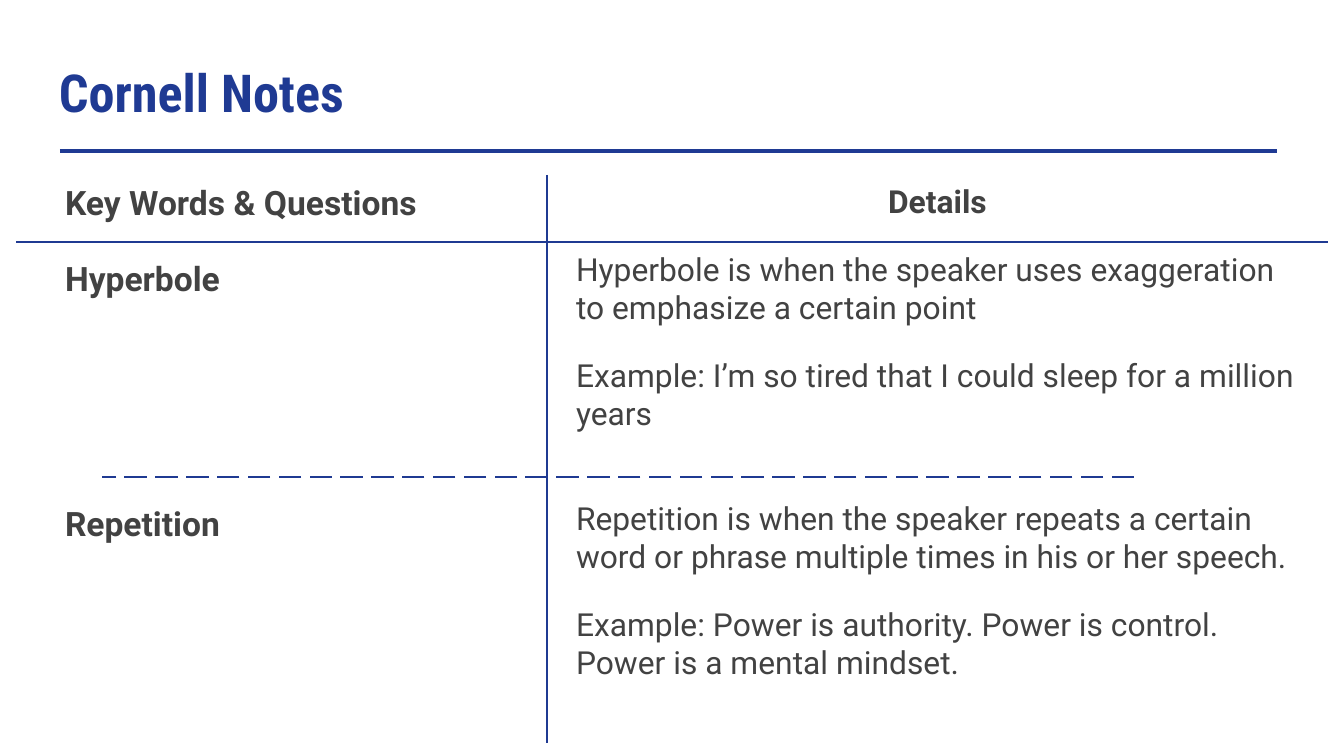
from lxml.etree import SubElement
from pptx import Presentation
from pptx.dml.color import RGBColor
from pptx.enum.dml import MSO_LINE_DASH_STYLE as Dash
from pptx.enum.shapes import MSO_CONNECTOR as Connector
from pptx.enum.text import PP_ALIGN as Align
from pptx.oxml.ns import qn
from pptx.util import Pt

EMU_PER_PX = 914400 / 134.4
INSET = 13
COLORS = {"title": "1F3A93", "divider": "1F3A92", "body": "424242"}


def px(length):
    """Turn a length in px into EMU."""
    return round(length * EMU_PER_PX)


def add_rule(slide, start, end, color="divider", weight=1.5, dash=None):
    """Draw a straight rule between two points."""
    rule = slide.shapes.add_connector(Connector.STRAIGHT, *map(px, start + end))
    rule.line.color.rgb = RGBColor.from_string(COLORS[color])
    rule.line.width = Pt(weight)
    if dash is not None:
        rule.line.dash_style = dash
    SubElement(rule._element.spPr, qn("a:effectLst"))


def add_text_frame(slide, left, top, width, height):
    """Add a wrapping text box with equal insets and return its frame."""
    frame = slide.shapes.add_textbox(*map(px, (left, top, width, height))).text_frame
    frame.word_wrap = True
    frame.margin_left = frame.margin_right = px(INSET)
    frame.margin_top = frame.margin_bottom = px(INSET)
    return frame


def format_paragraph(paragraph, size, bold, color="body", font="Roboto",
                     before=0, spacing=1.0, align=Align.LEFT):
    """Set the spacing, alignment and font of one paragraph."""
    paragraph.alignment = align
    paragraph.space_before = Pt(before)
    paragraph.line_spacing = spacing
    for run in paragraph.runs:
        run.font.name = font
        run.font.size = Pt(size)
        run.font.bold = bold
        run.font.color.rgb = RGBColor.from_string(COLORS[color])


def add_title(slide, title):
    """Add the slide title and the rule below it."""
    frame = add_text_frame(slide, 46, 47, 1253, 85)
    frame.text = title
    format_paragraph(frame.paragraphs[0], 28, True, "title", "Roboto Condensed")
    add_rule(slide, (60, 151), (1277, 151), "title", 2.25)


def add_key_words(slide, heading, entries):
    """Add the left column; each entry is a word and the space before it."""
    frame = add_text_frame(slide, 52, 163, 382, 535)
    frame.text = heading
    format_paragraph(frame.paragraphs[0], 18, True, spacing=1.15)
    for word, before in entries:
        paragraph = frame.add_paragraph()
        paragraph.text = word
        format_paragraph(paragraph, 18, True, before=before, spacing=1.15)


def add_details(slide, heading, entries):
    """Add the right column; each entry is a note and the space before it."""
    frame = add_text_frame(slide, 563, 163, 749, 569)
    frame.text = heading
    format_paragraph(frame.paragraphs[0], 17, True, spacing=1.15, align=Align.CENTER)
    for note, before in entries:
        paragraph = frame.add_paragraph()
        paragraph.text = note
        format_paragraph(paragraph, 17, False, before=before)


def main():
    """Build the Cornell notes slide."""
    deck = Presentation()
    deck.slide_width, deck.slide_height = px(1344), px(756)
    slide = deck.slides.add_slide(deck.slide_layouts[6])

    add_title(slide, "Cornell Notes")
    add_key_words(slide, "Key Words & Questions", [
        ("Hyperbole", 16),
        ("Repetition", 106),
    ])
    add_rule(slide, (547, 175), (547, 743))
    add_details(slide, "Details", [
        ("Hyperbole is when the speaker uses exaggeration to emphasize "
         "a certain point", 16),
        ("Example: I’m so tired that I could sleep for a million years", 16),
        ("Repetition is when the speaker repeats a certain word or phrase "
         "multiple times in his or her speech.", 36),
        ("Example: Power is authority. Power is control. "
         "Power is a mental mindset.", 16),
    ])
    add_rule(slide, (1328, 242), (16, 242))
    add_rule(slide, (1134, 477), (102, 477), dash=Dash.LONG_DASH)

    deck.save("out.pptx")


if __name__ == "__main__":
    main()
